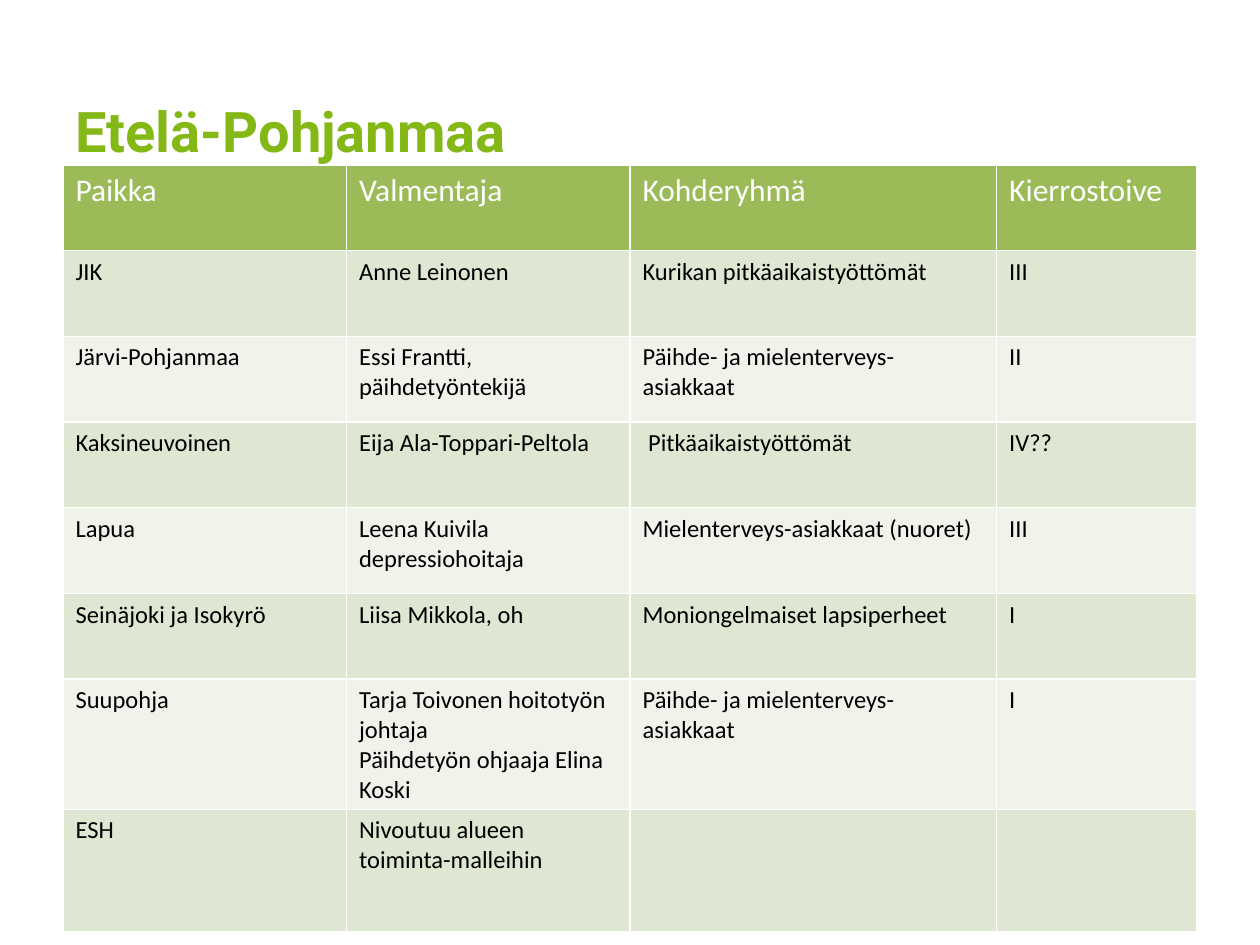
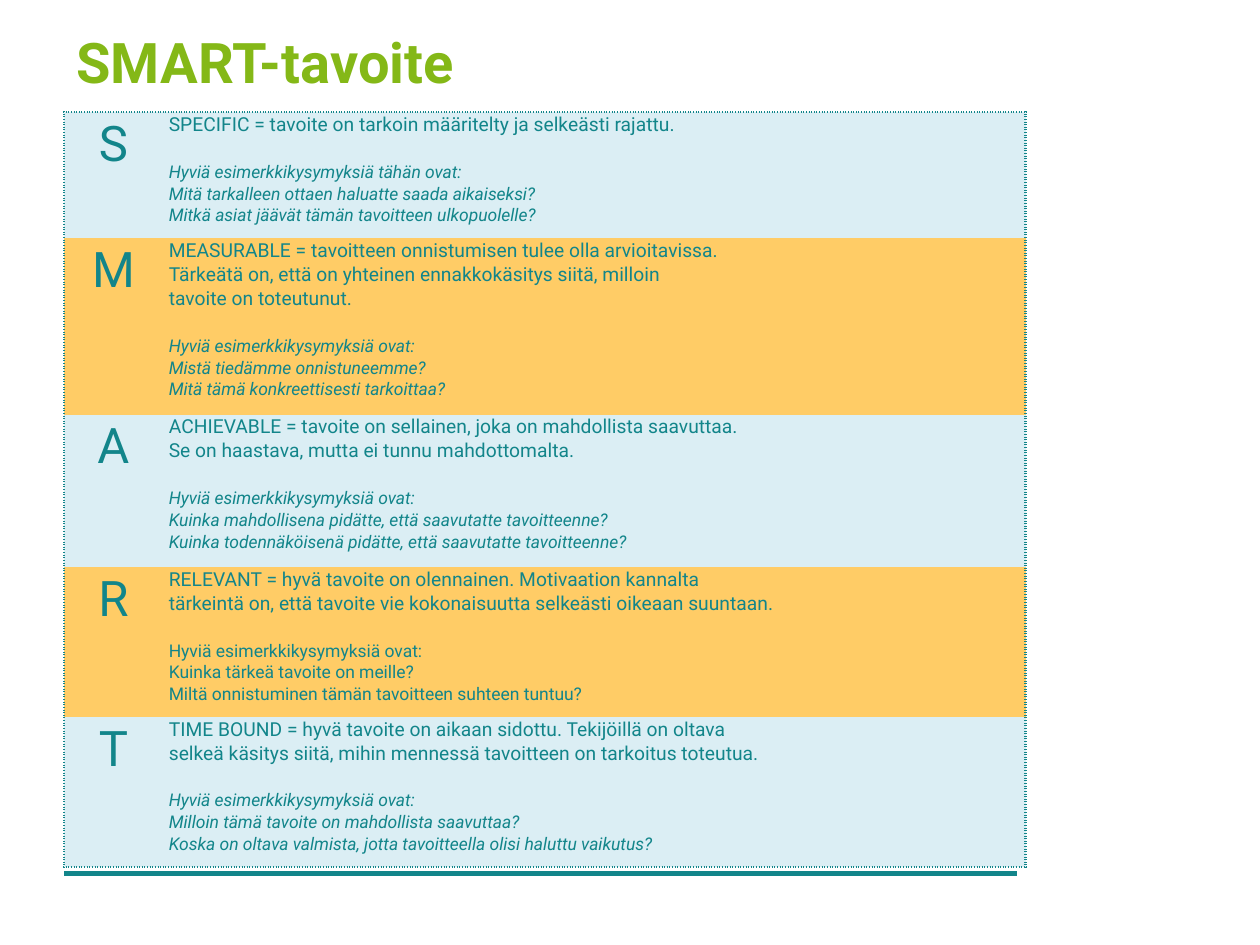
from dataclasses import dataclass

import lxml.etree
import pptx
import pptx.dml.color
import pptx.enum.shapes
import pptx.enum.text
import pptx.oxml
import pptx.oxml.ns
import pptx.util

Inches = pptx.util.Inches
Pt = pptx.util.Pt
Align = pptx.enum.text.PP_ALIGN


@dataclass(frozen=True)
class Theme:
    head: str = "Roboto"
    body: str = "Calibri"
    lime: str = "84B817"
    teal: str = "12858A"
    white: str = "FFFFFF"
    black: str = "000000"
    green: str = "9BBB59"
    greens: tuple = ("DEE7D1", "EFF3EA")
    smart: tuple = ("DBEEF4", "FFCC66")
    title_pt: int = 32
    header_pt: int = 18
    cell_pt: int = 14
    letter_pt: int = 28
    goal_pt: int = 11
    ask_pt: int = 10


THEME = Theme()

COACHES = [
    ("Paikka", "Valmentaja", "Kohderyhmä", "Kierrostoive"),
    ("JIK", "Anne Leinonen", "Kurikan pitkäaikaistyöttömät", "III"),
    ("Järvi-Pohjanmaa", "Essi Frantti, päihdetyöntekijä",
     "Päihde- ja mielenterveys-asiakkaat", "II"),
    ("Kaksineuvoinen", "Eija Ala-Toppari-Peltola",
     " Pitkäaikaistyöttömät", "IV??"),
    ("Lapua", "Leena Kuivila\ndepressiohoitaja",
     "Mielenterveys-asiakkaat (nuoret)", "III"),
    ("Seinäjoki ja Isokyrö", "Liisa Mikkola, oh",
     "Moniongelmaiset lapsiperheet", "I"),
    ("Suupohja",
     "Tarja Toivonen hoitotyön johtaja\nPäihdetyön ohjaaja Elina Koski",
     "Päihde- ja mielenterveys-asiakkaat", "I"),
    ("ESH", "Nivoutuu alueen toiminta-malleihin", "", ""),
]

ASK = "Hyviä esimerkkikysymyksiä ovat:"

# Letter, goal lines, question lines, italic questions
GOALS = [
    ("S", ["SPECIFIC = tavoite on tarkoin määritelty ja selkeästi rajattu."],
     ["Hyviä esimerkkikysymyksiä tähän ovat:",
      "Mitä tarkalleen ottaen haluatte saada aikaiseksi?",
      "Mitkä asiat jäävät tämän tavoitteen ulkopuolelle?"], True),
    ("M", ["MEASURABLE = tavoitteen onnistumisen tulee olla arvioitavissa.",
           "Tärkeätä on, että on yhteinen ennakkokäsitys siitä, milloin",
           "tavoite on toteutunut."],
     [ASK, "Mistä tiedämme onnistuneemme?",
      "Mitä tämä konkreettisesti tarkoittaa?"], True),
    ("A", ["ACHIEVABLE = tavoite on sellainen, joka on mahdollista saavuttaa.",
           "Se on haastava, mutta ei tunnu mahdottomalta."],
     [ASK, "Kuinka mahdollisena pidätte, että saavutatte tavoitteenne?",
      "Kuinka todennäköisenä pidätte, että saavutatte tavoitteenne?"], True),
    ("R", ["RELEVANT = hyvä tavoite on olennainen. Motivaation kannalta",
           "tärkeintä on, että tavoite vie kokonaisuutta selkeästi oikeaan "
           "suuntaan."],
     [ASK, "Kuinka tärkeä tavoite on meille?",
      "Miltä onnistuminen tämän tavoitteen suhteen tuntuu?"], False),
    ("T", ["TIME BOUND = hyvä tavoite on aikaan sidottu. Tekijöillä on oltava",
           "selkeä käsitys siitä, mihin mennessä tavoitteen on tarkoitus "
           "toteutua."],
     [ASK, "Milloin tämä tavoite on mahdollista saavuttaa?",
      "Koska on oltava valmista, jotta tavoitteella olisi haluttu vaikutus?"],
     True),
]


def rgb(code):
    return pptx.dml.color.RGBColor.from_string(code)


def style(para, face, size, color, bold=False, italic=False):
    font = para.font
    font.name, font.size = face, Pt(size)
    font.bold, font.italic = bold, italic
    font.color.rgb = rgb(color)


def add_rule(slide):
    """Draw the teal footer line."""
    line = slide.shapes.add_connector(
        pptx.enum.shapes.MSO_CONNECTOR.STRAIGHT,
        Inches(0.51), Inches(6.93), Inches(8.07), Inches(6.93))
    line.line.color.rgb = rgb(THEME.teal)
    line.line.width = Pt(3)
    props = line._element.spPr
    lxml.etree.SubElement(props, pptx.oxml.ns.qn("a:effectLst"))


def add_title(slide, text, left, top):
    box = slide.shapes.add_textbox(
        Inches(left), Inches(top), Inches(9), Inches(0.87))
    frame = box.text_frame
    frame.word_wrap = True
    frame.margin_top = Inches(0.09)
    frame.text = text
    style(frame.paragraphs[0], THEME.head, THEME.title_pt, THEME.lime,
          bold=True)


def new_slide(deck, title, left, top):
    slide = deck.slides.add_slide(deck.slide_layouts[6])
    add_rule(slide)
    add_title(slide, title, left, top)
    return slide


def add_grid(slide, left, top, cols, rows):
    """Add an unstyled table with the given column and row sizes."""
    frame = slide.shapes.add_table(
        len(rows), len(cols), Inches(left), Inches(top),
        Inches(sum(cols)), Inches(sum(rows)))
    table = frame.table
    table.first_row = table.horz_banding = False
    for col, width in zip(table.columns, cols):
        col.width = Inches(width)
    for row, height in zip(table.rows, rows):
        row.height = Inches(height)
    return table


def paint(cell, fill, color, width, sides="LRTB", dash="solid"):
    """Fill a cell and draw the named sides; the others get no line."""
    props = cell._tc.get_or_add_tcPr()
    for side in "LRTB":
        line = lxml.etree.SubElement(props, pptx.oxml.ns.qn("a:ln" + side))
        if side not in sides:
            lxml.etree.SubElement(line, pptx.oxml.ns.qn("a:noFill"))
            continue
        line.set("w", str(Pt(width)))
        solid = lxml.etree.SubElement(line, pptx.oxml.ns.qn("a:solidFill"))
        lxml.etree.SubElement(
            solid, pptx.oxml.ns.qn("a:srgbClr"), val=color)
        lxml.etree.SubElement(line, pptx.oxml.ns.qn("a:prstDash"), val=dash)
    cell.fill.solid()
    cell.fill.fore_color.rgb = rgb(fill)


def outer(row, col, rows, cols):
    """Name the sides of a cell that lie on the table's edge."""
    edges = {"L": col == 0, "R": col == cols - 1,
             "T": row == 0, "B": row == rows - 1}
    return [side for side, edge in edges.items() if edge]


def add_coaches(slide):
    table = add_grid(slide, 0.5, 1.31, [2.25, 2.25, 2.91, 1.59],
                     [0.68] * 7 + [0.97])
    for r, texts in enumerate(COACHES):
        if r == 0:
            fill, size, color = THEME.green, THEME.header_pt, THEME.white
        else:
            fill, size, color = (
                THEME.greens[(r - 1) % 2], THEME.cell_pt, THEME.black)
        for c, text in enumerate(texts):
            cell = table.cell(r, c)
            paint(cell, fill, THEME.white, 1)
            cell.text = text
            for para in cell.text_frame.paragraphs:
                style(para, THEME.body, size, color)


def fill_goal(cell, goals, asks, italic):
    cell.text = "\n".join(goals + asks)
    for i, para in enumerate(cell.text_frame.paragraphs):
        para.line_spacing = 1.07
        asking = i >= len(goals)
        if i == len(goals):
            para.space_before = Pt(14)
        style(para, THEME.head, THEME.ask_pt if asking else THEME.goal_pt,
              THEME.teal, italic=asking and italic)


def fill_letter(cell, letter):
    cell.text = letter
    para = cell.text_frame.paragraphs[0]
    para.alignment = Align.CENTER
    para.line_spacing = 1.07
    style(para, THEME.head, THEME.letter_pt, THEME.teal)


def add_goals(slide):
    cols, rows = [0.78, 6.85], [1, 1.4, 1.21, 1.19, 1.19]
    table = add_grid(slide, 0.51, 0.89, cols, rows)
    for r, (letter, goals, asks, italic) in enumerate(GOALS):
        for c in range(len(cols)):
            cell = table.cell(r, c)
            cell.margin_left = cell.margin_right = Inches(0.05)
            cell.margin_top = cell.margin_bottom = 0
            paint(cell, THEME.smart[r % 2], THEME.teal, 1.5,
                  outer(r, c, len(rows), len(cols)), "sysDot")
        fill_letter(table.cell(r, 0), letter)
        fill_goal(table.cell(r, 1), goals, asks, italic)


def main():
    deck = pptx.Presentation()
    deck.slide_width, deck.slide_height = Inches(10), Inches(7.5)
    add_coaches(new_slide(deck, "Etelä-Pohjanmaa", 0.5, 0.68))
    add_goals(new_slide(deck, "SMART-tavoite", 0.51, 0.13))
    deck.save("out.pptx")


if __name__ == "__main__":
    main()
